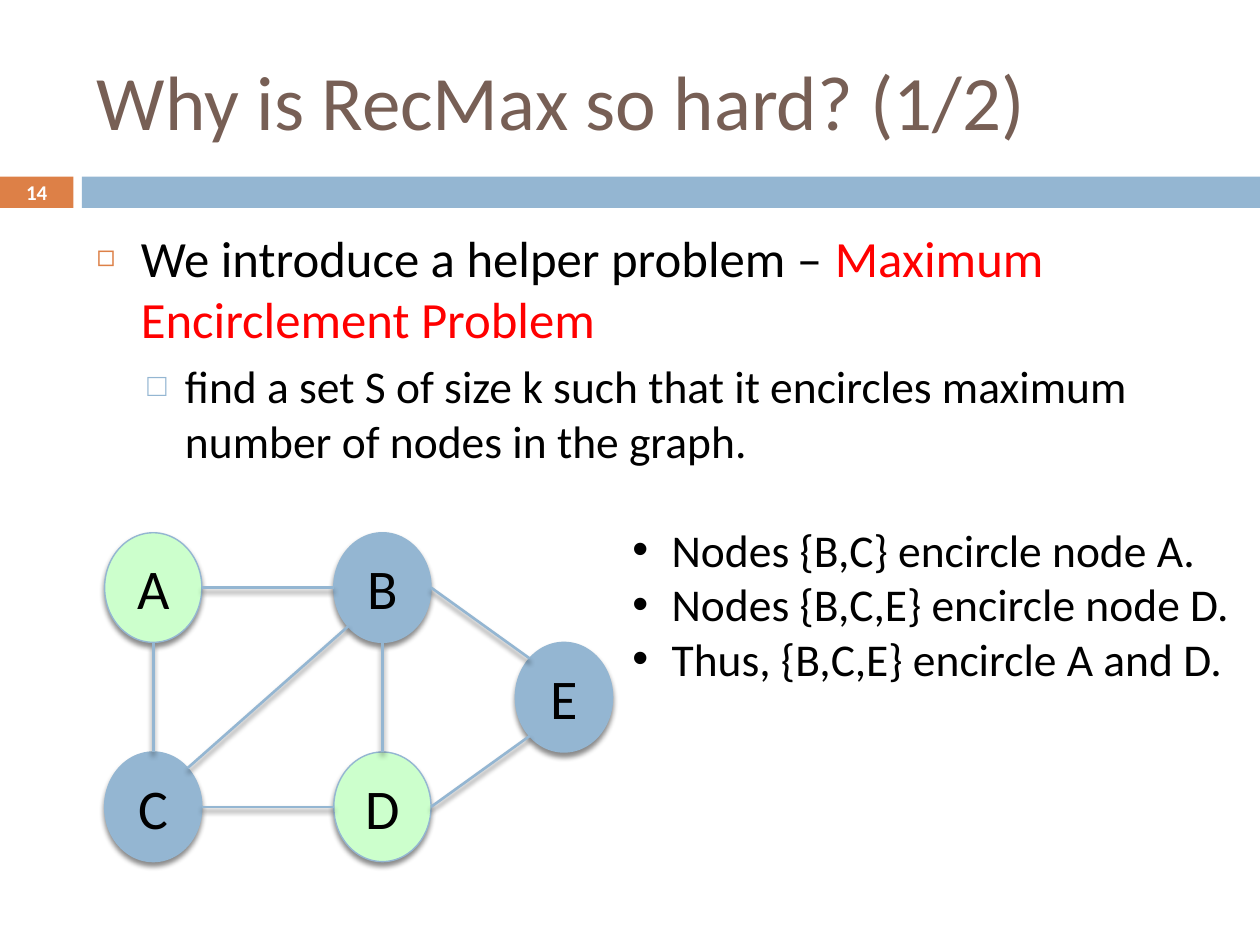
import math
from lxml import etree
from pptx import Presentation
from pptx.dml.color import RGBColor
from pptx.enum import shapes, text
from pptx.oxml import ns
from pptx.util import Cm, Pt

FONT = "Calibri"
HEX = {"title": "775F55", "orange": "DD8047", "blue": "94B6D2", "green": "CCFFCC",
       "black": "000000", "red": "FF0000", "white": "FFFFFF"}

TITLE = "Why is RecMax so hard? (1/2)"
PAGE = "14"
# Each paragraph: runs, size, space before, left indent, hang, bullet
INTRO = [
    ([("We introduce a helper problem – ", "black"),
      ("Maximum Encirclement Problem", "red")], 29, 7, 0.89, 0.89, ("◻", "orange", 60)),
    ([("find a set S of size k such that it encircles maximum "
       "number of nodes in the graph.", "black")], 26, 5.5, 1.78, 0.76, ("□", "blue", 70)),
]
FACTS = [([(line, "black")], 26, 0, 0.79, 0.79, ("•", "black", 100)) for line in (
    "Nodes {B,C} encircle node A.",
    "Nodes {B,C,E} encircle node D.",
    "Thus, {B,C,E} encircle A and D.")]

# Node: column, row, fill
NODES = {"A": (0, 0, "green"), "D": (1, 2, "green"), "B": (1, 0, "blue"),
         "C": (0, 2, "blue"), "E": (2, 1, "blue")}
# Edge: node and angle on its rim (0 right, 90 down), at both ends
EDGES = [("A", 0, "B", 180), ("A", 90, "C", 270), ("C", 0, "D", 180),
         ("C", 315, "B", 135), ("D", 0, "E", 135), ("B", 0, "E", 225),
         ("B", 90, "D", 270)]
COLS = [2.11, 6.73, 10.39]
TOP, WIDE, HIGH = 10.74, 1.96, 2.21


def color(name):
    return RGBColor.from_string(HEX[name])


def style(run, size, name, bold=False):
    font = run.font
    font.name, font.size, font.bold = FONT, Pt(size), bold
    font.color.rgb = color(name)


def bullet(para, left, hang, mark):
    char, name, scale = mark
    props = para._p.get_or_add_pPr()
    props.set("marL", str(Cm(left)))
    props.set("indent", str(-Cm(hang)))
    tint = etree.SubElement(props, ns.qn("a:buClr"))
    etree.SubElement(tint, ns.qn("a:srgbClr"), val=HEX[name])
    etree.SubElement(props, ns.qn("a:buSzPct"), val=str(scale * 1000))
    etree.SubElement(props, ns.qn("a:buFont"), typeface="Arial")
    etree.SubElement(props, ns.qn("a:buChar"), char=char)


def shade(shape):
    """Give a node or an edge its soft shadow straight below."""
    effects = etree.SubElement(shape._element.spPr, ns.qn("a:effectLst"))
    outer = etree.SubElement(effects, ns.qn("a:outerShdw"), blurRad=str(Pt(3)),
                             dist=str(Pt(2.4)), dir="5400000", rotWithShape="0")
    tint = etree.SubElement(outer, ns.qn("a:srgbClr"), val=HEX["black"])
    etree.SubElement(tint, ns.qn("a:alpha"), val="45000")


def add_list(slide, box, paras):
    frame = slide.shapes.add_textbox(*map(Cm, box)).text_frame
    frame.word_wrap = True
    for i, (runs, size, before, left, hang, mark) in enumerate(paras):
        para = frame.add_paragraph() if i else frame.paragraphs[0]
        para.space_before = Pt(before)
        bullet(para, left, hang, mark)
        for words, name in runs:
            run = para.add_run()
            run.text = words
            style(run, size, name)


def add_label(shape, words, size, name, bold=False):
    frame = shape.text_frame
    frame.margin_left = frame.margin_right = 0
    frame.vertical_anchor = text.MSO_ANCHOR.MIDDLE
    para = frame.paragraphs[0]
    para.text = words
    para.alignment = text.PP_ALIGN.CENTER
    style(para.runs[0], size, name, bold)


def add_bar(slide, left, width, name):
    bar = slide.shapes.add_shape(shapes.MSO_SHAPE.RECTANGLE, Cm(left), Cm(3.56),
                                 Cm(width), Cm(0.63))
    bar.shadow.inherit = False
    bar.fill.solid()
    bar.fill.fore_color.rgb = color(name)
    bar.line.fill.background()
    return bar


def add_node(slide, name):
    col, row, fill = NODES[name]
    node = slide.shapes.add_shape(shapes.MSO_SHAPE.OVAL, Cm(COLS[col]),
                                  Cm(TOP + row * HIGH), Cm(WIDE), Cm(HIGH))
    node.fill.solid()
    node.fill.fore_color.rgb = color(fill)
    node.line.color.rgb = color("blue")
    node.line.width = Pt(0.8)
    shade(node)
    add_label(node, name, 32, "black")


def rim(name, angle):
    """Return the point on a node's outline at an angle."""
    col, row, _ = NODES[name]
    turn = math.radians(angle)
    return (Cm(COLS[col] + WIDE / 2 * (1 + math.cos(turn))),
            Cm(TOP + row * HIGH + HIGH / 2 * (1 + math.sin(turn))))


def add_edge(slide, start, out, end, into):
    edge = slide.shapes.add_connector(shapes.MSO_CONNECTOR.STRAIGHT,
                                      *rim(start, out), *rim(end, into))
    edge.line.color.rgb = color("blue")
    edge.line.width = Pt(1.5)
    shade(edge)


def main():
    deck = Presentation()
    deck.slide_width, deck.slide_height = Cm(25.4), Cm(19.05)
    slide = deck.slides.add_slide(deck.slide_layouts[5])

    title = slide.shapes.title
    title.left, title.top, title.width, title.height = map(Cm, (1.7, 0.64, 22.66, 2.74))
    title.text_frame.text = TITLE
    title.text_frame.vertical_anchor = text.MSO_ANCHOR.MIDDLE
    para = title.text_frame.paragraphs[0]
    para.alignment = text.PP_ALIGN.LEFT
    style(para.runs[0], 44, "title")

    add_label(add_bar(slide, 0, 1.48, "orange"), PAGE, 12, "white", True)
    add_bar(slide, 1.65, 23.75, "blue")
    add_list(slide, (1.7, 4.45, 22.66, 5.28), INTRO)
    for name in NODES:
        add_node(slide, name)
    for edge in EDGES:
        add_edge(slide, *edge)
    add_list(slide, (12.5, 10.39, 12.9, 3.58), FACTS)
    deck.save("out.pptx")


if __name__ == "__main__":
    main()
